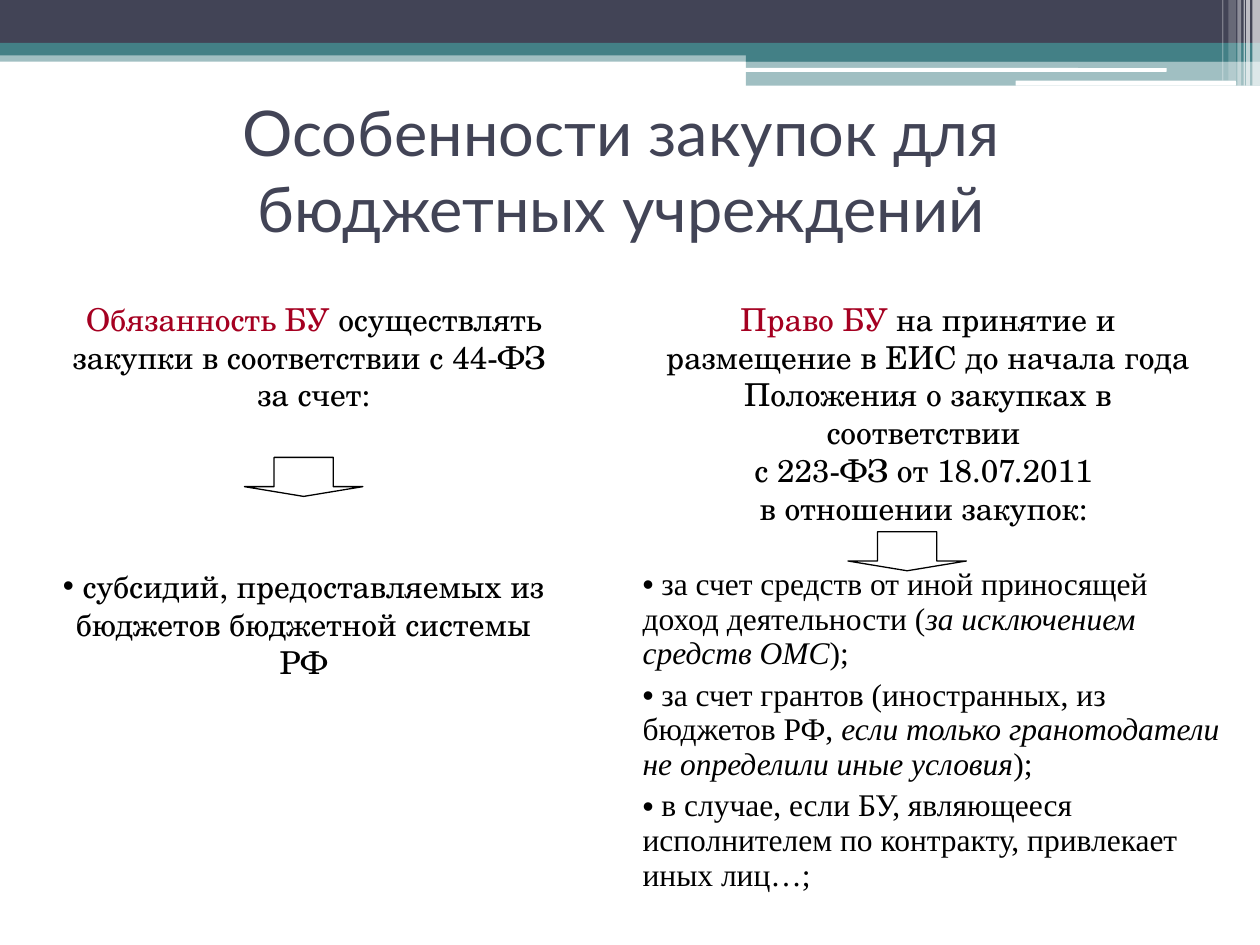
from typing import NamedTuple

from lxml import etree
from pptx import Presentation
from pptx.dml import color
from pptx.enum import shapes, text
from pptx.oxml import ns
from pptx import util as u

SERIF = "TeX Gyre Schola"
TIMES = "Times New Roman"
BLACK, WHITE, RED = "000000", "FFFFFF", "A50021"
NAVY, TEAL = "424456", "438086"
RECT = shapes.MSO_SHAPE.RECTANGLE
ROUND = shapes.MSO_SHAPE.ROUNDED_RECTANGLE


class Bar(NamedTuple):
    left: float
    top: float
    width: float
    height: float
    fill: str
    alpha: int = 100
    kind: int = RECT


class Piece(NamedTuple):
    words: str
    tint: str = BLACK
    slant: bool = False


class Block(NamedTuple):
    left: float
    top: float
    width: float
    height: float
    pieces: list
    face: str = SERIF
    size: int = 18
    dot: bool = False


def paint(target, tint: str) -> None:
    target.rgb = color.RGBColor.from_string(tint)


def place(slide, kind: int, *rect: float):
    shape = slide.shapes.add_shape(kind, *map(u.Inches, rect))
    shape.shadow.inherit = False
    return shape


def draw_bar(slide, bar: Bar) -> None:
    shape = place(slide, bar.kind, *bar[:4])
    shape.fill.solid()
    paint(shape.fill.fore_color, bar.fill)
    shape.line.fill.background()
    if bar.alpha < 100:
        tone = shape.element.spPr.find(".//" + ns.qn("a:srgbClr"))
        etree.SubElement(tone, ns.qn("a:alpha"), val=str(bar.alpha * 1000))


def draw_arrow(slide, left: float, top: float) -> None:
    arrow = place(slide, shapes.MSO_SHAPE.DOWN_ARROW, left, top, 0.94, 0.31)
    arrow.adjustments[1] = 0.25
    arrow.fill.background()
    paint(arrow.line.color, BLACK)
    arrow.line.width = u.Pt(0.75)


def write(para, pieces: list, face: str, size: int, dot: bool) -> None:
    if dot:
        props = para._p.get_or_add_pPr()
        props.set("marL", "0")
        props.set("indent", "0")
        etree.SubElement(props, ns.qn("a:buFont"), typeface="Arial")
        etree.SubElement(props, ns.qn("a:buChar"), char="•")
    for piece in pieces:
        for index, line in enumerate(piece.words.split("\n")):
            if index:
                para.add_line_break()
            run = para.add_run()
            run.text = line
            run.font.name = face
            run.font.size = u.Pt(size)
            run.font.italic = piece.slant
            paint(run.font.color, piece.tint)


def draw_block(slide, block: Block):
    box = slide.shapes.add_textbox(*map(u.Inches, block[:4]))
    frame = box.text_frame
    frame.word_wrap = True
    para = frame.paragraphs[0]
    para.alignment = text.PP_ALIGN.CENTER
    write(para, block.pieces, block.face, block.size, block.dot)
    return frame


def draw_table(slide, items: list) -> None:
    rect = map(u.Inches, (5, 4.45, 4.8, 2.92))
    table = slide.shapes.add_table(1, 1, *rect).table
    table.first_row = table.horz_banding = False
    cell = table.cell(0, 0)
    cell.fill.background()
    frame = cell.text_frame
    for index, pieces in enumerate(items):
        para = frame.add_paragraph() if index else frame.paragraphs[0]
        if index:
            para.space_before = u.Pt(3.6)
        write(para, pieces, TIMES, 18, True)


BARS = [
    Bar(0, 0.4, 10, 0.09, TEAL, 50),
    Bar(0, 0, 10, 0.34, NAVY),
    Bar(0, 0.34, 10, 0.1, TEAL),
    Bar(5.92, 0.39, 4.08, 0.1, TEAL),
    Bar(5.92, 0.48, 4.08, 0.2, TEAL, 50),
    Bar(5.91, 0.54, 3.35, 0.03, WHITE, kind=ROUND),
    Bar(8.06, 0.64, 1.75, 0.04, WHITE, kind=ROUND),
    Bar(9.94, 0, 0.06, 0.68, WHITE, 65),
    Bar(9.89, 0, 0.03, 0.68, WHITE, 65),
    Bar(9.87, 0, 0.01, 0.68, WHITE, 60),
    Bar(9.82, 0, 0.03, 0.68, WHITE, 40),
    Bar(9.75, 0, 0.06, 0.64, WHITE, 20),
    Bar(9.7, 0, 0.01, 0.64, WHITE, 30),
]

TITLE = Block(0.43, 0.76, 9, 1.17, [
    Piece("Особенности закупок для бюджетных учреждений", NAVY),
], "Lato", 36)

DUTY = Block(0.43, 2.33, 4.12, 1, [
    Piece("Обязанность БУ ", RED),
    Piece("осуществлять закупки в соответствии с 44-ФЗ \nза счет:"),
])

RIGHT = Block(5.08, 2.33, 4.57, 1.92, [
    Piece("Право БУ ", RED),
    Piece("на принятие и размещение в ЕИС до начала года Положения о закупках "
          "в соответствии \nс 223-ФЗ от 18.07.2011 \nв отношении закупок: "),
])

GRANT = Block(0.35, 4.45, 4.12, 1.01, [
    Piece(" субсидий, предоставляемых из бюджетов бюджетной системы РФ"),
], dot=True)

ITEMS = [
    [Piece(" за счет средств от иной приносящей доход деятельности ("),
     Piece("за исключением средств ОМС", slant=True), Piece(");")],
    [Piece(" за счет грантов (иностранных, из бюджетов РФ, "),
     Piece("если только гранотодатели не определили иные условия", slant=True),
     Piece(");")],
    [Piece(" в случае, если БУ, являющееся исполнителем по контракту, "
           "привлекает иных лиц…;")],
]


def main() -> None:
    deck = Presentation()
    deck.slide_width, deck.slide_height = u.Inches(10), u.Inches(7.5)
    slide = deck.slides.add_slide(deck.slide_layouts[6])
    for bar in BARS:
        draw_bar(slide, bar)
    title = draw_block(slide, TITLE)
    title.vertical_anchor = text.MSO_ANCHOR.MIDDLE
    for block in (DUTY, RIGHT):
        draw_block(slide, block)
    draw_table(slide, ITEMS)
    draw_block(slide, GRANT)
    draw_arrow(slide, 6.73, 4.22)
    draw_arrow(slide, 1.94, 3.63)
    deck.save("out.pptx")


if __name__ == "__main__":
    main()
